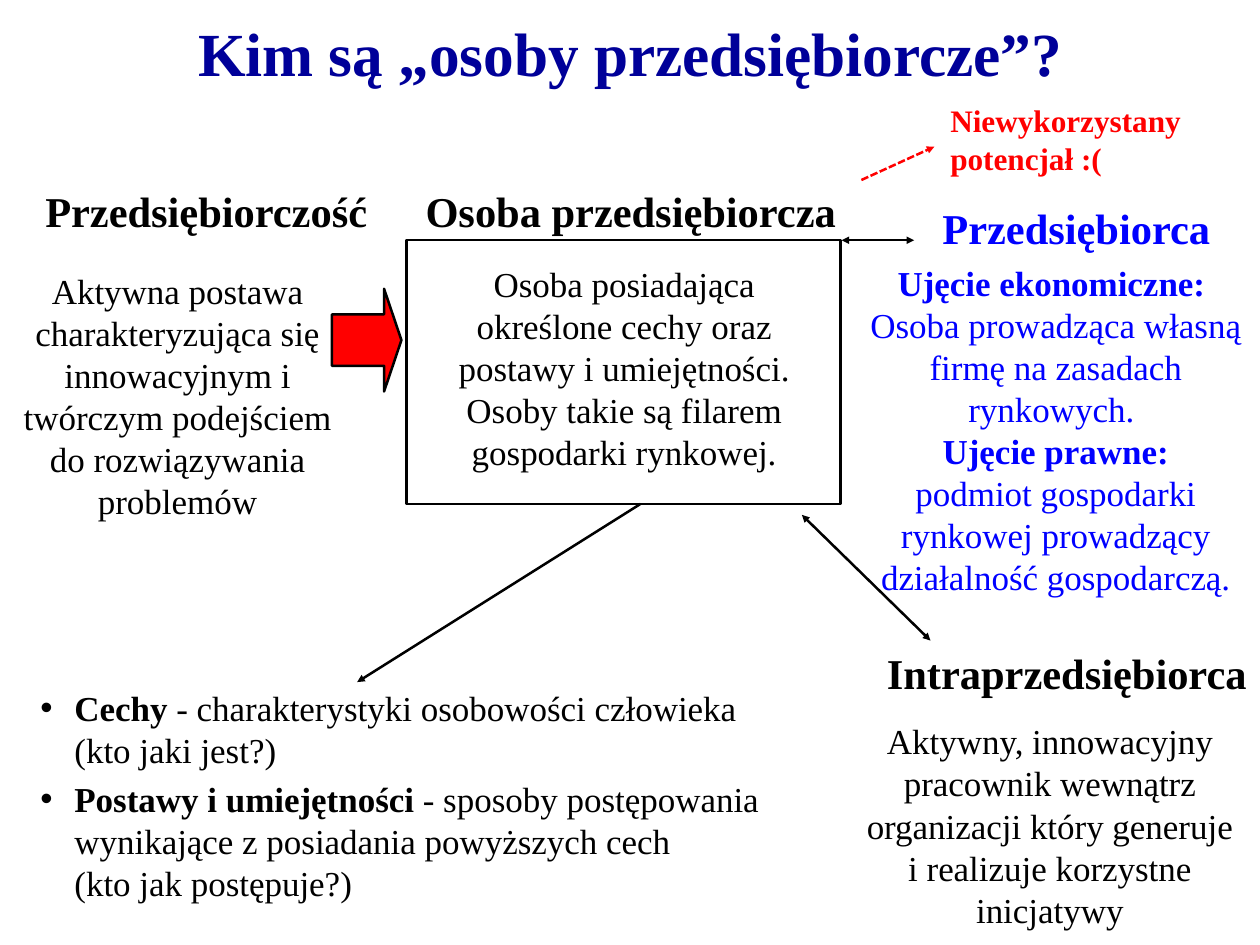
from pptx import Presentation
from pptx.dml.color import RGBColor
from pptx.enum.dml import MSO_LINE
from pptx.enum.shapes import MSO_CONNECTOR, MSO_SHAPE
from pptx.enum.text import MSO_ANCHOR, MSO_AUTO_SIZE, PP_ALIGN
from pptx.oxml.ns import qn
from pptx.util import Cm, Pt
from lxml import etree

LEFT, MID = PP_ALIGN.LEFT, PP_ALIGN.CENTER
DASH = MSO_LINE.SQUARE_DOT
FONT = "Times New Roman"
COLORS = {"navy": "000099", "black": "000000", "blue": "0000FF", "red": "FF0000"}

# Content: places are left, top, width, height in cm; a paragraph is a list of (text, bold)
TITLE = "Kim są „osoby przedsiębiorcze”?"
HEADS = [
    ("Przedsiębiorczość", (0.86, 5.03, 9.93, 1.8), "black"),
    ("Osoba przedsiębiorcza", (11.58, 5.03, 12.45, 1.8), "black"),
    ("Przedsiębiorca", (26.19, 5.51, 8.38, 1.8), "blue"),
    ("Intraprzedsiębiorca", (24.61, 18.08, 11, 1.8), "black"),
]
TEXTS = [
    ([[("Aktywna postawa charakteryzująca się innowacyjnym i twórczym "
        "podejściem do rozwiązywania problemów", False)]],
     (-0.03, 7.42, 10.08, 7.47), "black"),
    ([[("Osoba posiadająca określone cechy oraz postawy i umiejętności. "
        "Osoby takie są filarem gospodarki rynkowej.", False)]],
     (11.99, 7.24, 11.25, 6.27), "black"),
    ([[("Ujęcie ekonomiczne: \n", True),
       ("Osoba prowadząca własną firmę na zasadach rynkowych. ", False)],
      [("Ujęcie prawne:\n", True),
       ("podmiot gospodarki rynkowej prowadzący działalność gospodarczą.", False)]],
     (23.57, 7.21, 12.45, 9.93), "blue"),
    ([[("Aktywny, innowacyjny pracownik wewnątrz organizacji który generuje\n"
        "i realizuje korzystne inicjatywy", False)]],
     (23.7, 20.14, 11.86, 6.27), "black"),
]
TRAITS = [
    [("Cechy", True), (" - charakterystyki osobowości człowieka (kto jaki jest?)", False)],
    [("Postawy i umiejętności", True),
     (" - sposoby postępowania wynikające z posiadania powyższych cech \n"
      "(kto jak postępuje?)", False)],
]
NOTE = "Niewykorzystany \npotencjał :("
# Lines: from x, y, to x, y; ends with heads; colour; dash
LINES = [
    ((18.08, 14.22, 10.08, 19.25), ("tailEnd",), "black", None),
    ((23.75, 6.78, 25.8, 6.78), ("headEnd", "tailEnd"), "black", None),
    ((22.63, 14.53, 26.26, 18.08), ("headEnd", "tailEnd"), "black", None),
    ((24.31, 5.08, 26.37, 4.14), ("tailEnd",), "red", DASH),
]


def color(name):
    return RGBColor.from_string(COLORS[name])


def cm(vals):
    return [Cm(v) for v in vals]


def write(shape, paras, size=28, hue="black", align=MID, wrap=True,
          inset=(0.36, 0.18), anchor=MSO_ANCHOR.TOP, bullet=False):
    frame = shape.text_frame
    frame.auto_size = MSO_AUTO_SIZE.NONE
    frame.word_wrap = wrap
    frame.vertical_anchor = anchor
    frame.margin_left = frame.margin_right = Cm(inset[0])
    frame.margin_top = frame.margin_bottom = Cm(inset[1])
    for i, runs in enumerate(paras):
        para = frame.add_paragraph() if i else frame.paragraphs[0]
        para.alignment = align
        para.space_before = Pt(size * 0.2 if i and bullet else 0)
        if bullet:
            props = para._p.get_or_add_pPr()
            props.set("marL", str(Cm(0.96)))
            props.set("indent", str(-Cm(0.96)))
            etree.SubElement(props, qn("a:buChar")).set("char", "•")
        for text, bold in runs:
            for j, part in enumerate(text.split("\n")):
                if j:
                    para.add_line_break()
                if part:
                    run = para.add_run()
                    run.text = part
                    font = run.font
                    font.name, font.size, font.bold = FONT, Pt(size), bold
                    font.color.rgb = color(hue)


def place(shape, box):
    shape.left, shape.top, shape.width, shape.height = cm(box)
    return shape


def outline(line, hue):
    line.color.rgb = color(hue)
    line.width = Pt(2)


def block(shapes, kind, box, fill=None):
    shape = shapes.add_shape(kind, *cm(box))
    shape.shadow.inherit = False
    if fill:
        shape.fill.solid()
        shape.fill.fore_color.rgb = color(fill)
    else:
        shape.fill.background()
    outline(shape.line, "black")
    return shape


def main():
    prs = Presentation()
    prs.slide_width, prs.slide_height = Cm(35.56), Cm(26.67)
    slide = prs.slides.add_slide(prs.slide_layouts[1])
    shapes = slide.shapes

    # Title and list of traits
    write(place(shapes.title, (2.67, 0.3, 30.23, 2.36)), [[(TITLE, True)]],
          size=49, hue="navy", anchor=MSO_ANCHOR.MIDDLE)
    write(place(slide.placeholders[1], (0.89, 19.25, 21.92, 5.03)), TRAITS,
          align=LEFT, inset=(0.25, 0.13), bullet=True)

    # Headings and descriptions
    for text, box, hue in HEADS:
        write(shapes.add_textbox(*cm(box)), [[(text, True)]],
              size=34, hue=hue, wrap=False)
    for paras, box, hue in TEXTS:
        write(shapes.add_textbox(*cm(box)), paras, hue=hue)

    # Block arrow and frame
    arrow = block(shapes, MSO_SHAPE.RIGHT_ARROW, (9.37, 8.15, 1.96, 2.9), "red")
    arrow.adjustments[0], arrow.adjustments[1] = 0.5, 0.25
    block(shapes, MSO_SHAPE.RECTANGLE, (11.48, 6.78, 12.24, 7.44))

    # Thin arrows
    for ends, heads, hue, dash in LINES:
        link = shapes.add_connector(MSO_CONNECTOR.STRAIGHT, *cm(ends))
        outline(link.line, hue)
        if dash:
            link.line.dash_style = dash
        for head in heads:
            etree.SubElement(link.line._get_or_add_ln(), qn("a:" + head)).set("type", "triangle")
        etree.SubElement(link._element.spPr, qn("a:effectLst"))

    # Red note
    write(shapes.add_textbox(*cm((26.57, 2.74, 7.32, 2.39))), [[(NOTE, True)]],
          size=25, hue="red", align=LEFT, wrap=False, inset=(0.25, 0.13))

    prs.save("out.pptx")


if __name__ == "__main__":
    main()
